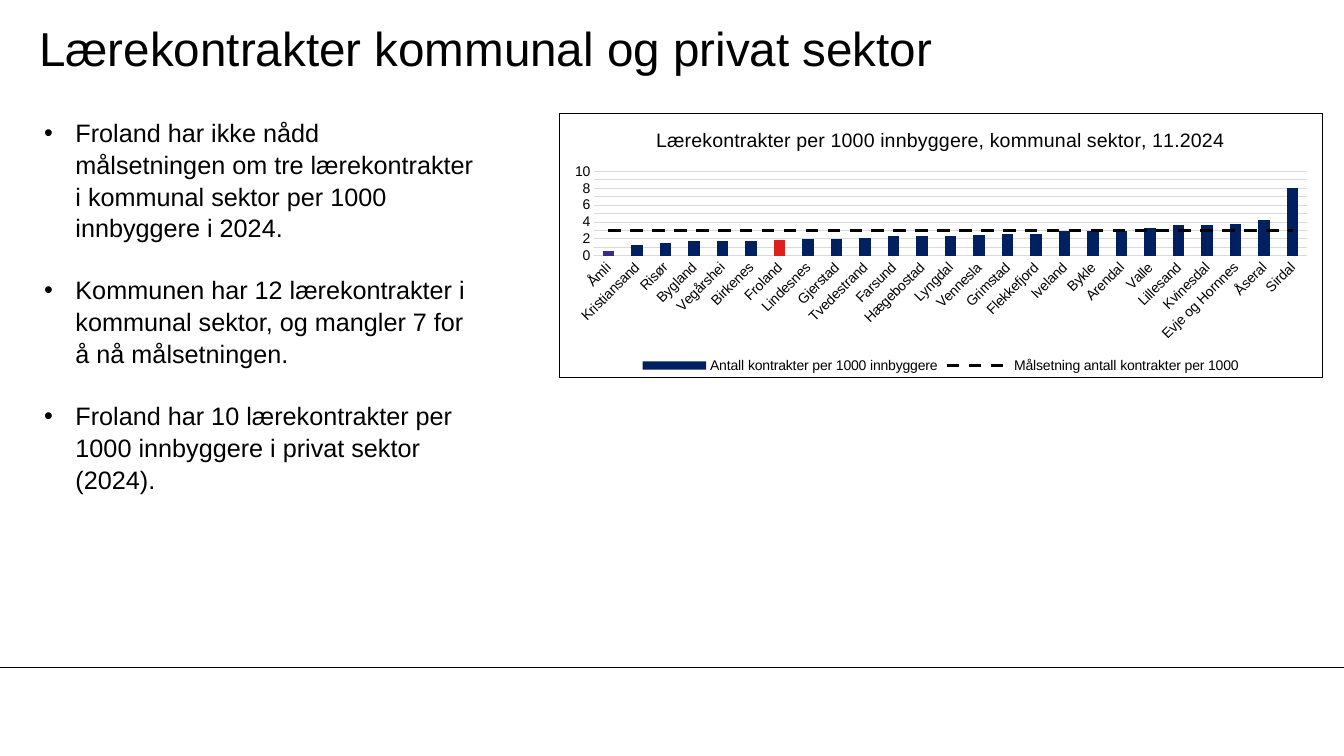
from lxml.etree import SubElement
from pptx import Presentation
from pptx.chart.data import CategoryChartData
from pptx.dml.color import RGBColor
from pptx.enum.chart import (XL_CHART_TYPE as ChartType, XL_LEGEND_POSITION as LegendPosition,
                             XL_MARKER_STYLE as MarkerStyle, XL_TICK_MARK as TickMark)
from pptx.enum.dml import MSO_LINE_DASH_STYLE as Dash
from pptx.enum.shapes import MSO_CONNECTOR as Connector
from pptx.enum.text import MSO_ANCHOR as Anchor
from pptx.oxml import parse_xml
from pptx.oxml.ns import nsdecls, qn
from pptx.util import Inches, Pt

COLORS = {"text": "000000", "bar": "002060", "lowest": "352D86", "froland": "DF1F1D",
          "grid": "D9D9D9", "background": "FFFFFF"}
FONT = "Arial"
TITLE = "Lærekontrakter kommunal og privat sektor"
BULLETS = [
    "Froland har ikke nådd målsetningen om tre lærekontrakter i kommunal sektor per 1000 innbyggere i 2024.",
    "Kommunen har 12 lærekontrakter i kommunal sektor, og mangler 7 for å nå målsetningen.",
    "Froland har 10 lærekontrakter per 1000 innbyggere i privat sektor (2024).",
]
CHART_TITLE = "Lærekontrakter per 1000 innbyggere, kommunal sektor, 11.2024"
TARGET = 3
CONTRACTS = {
    "Åmli": 0.6, "Kristiansand": 1.3, "Risør": 1.5, "Bygland": 1.8, "Vegårshei": 1.8,
    "Birkenes": 1.8, "Froland": 1.9, "Lindesnes": 2, "Gjerstad": 2, "Tvedestrand": 2.1,
    "Farsund": 2.3, "Hægebostad": 2.3, "Lyngdal": 2.3, "Vennesla": 2.5, "Grimstad": 2.6,
    "Flekkefjord": 2.6, "Iveland": 2.9, "Bykle": 3, "Arendal": 3, "Valle": 3.3,
    "Lillesand": 3.6, "Kvinesdal": 3.7, "Evje og Hornnes": 3.8, "Åseral": 4.3, "Sirdal": 8,
}
HIGHLIGHTS = {"Åmli": "lowest", "Froland": "froland"}


def rgb(name):
    return RGBColor.from_string(COLORS[name])


def style_font(font, size):
    font.name = FONT
    font.size = Pt(size)
    font.bold = False
    font.color.rgb = rgb("text")


def style_line(line, color, width=0.75):
    line.color.rgb = rgb(color)
    line.width = Pt(width)


def add_rule(slide, top, width):
    rule = slide.shapes.add_connector(Connector.STRAIGHT, 0, top, width, top)
    style_line(rule.line, "text")
    SubElement(rule._element.spPr, qn("a:effectLst"))


def add_title(slide):
    frame = slide.shapes.add_textbox(Inches(0.39), Inches(0.1), Inches(11.1), Inches(0.75)).text_frame
    frame.word_wrap = True
    frame.vertical_anchor = Anchor.MIDDLE
    frame.margin_left = frame.margin_right = frame.margin_top = frame.margin_bottom = 0
    run = frame.paragraphs[0].add_run()
    run.text = TITLE
    style_font(run.font, 34)


def add_bullets(slide):
    frame = slide.shapes.add_textbox(Inches(0.34), Inches(1.1), Inches(4.48), Inches(4.04)).text_frame
    frame.word_wrap = True
    for index, text in enumerate(BULLETS):
        paragraph = frame.add_paragraph() if index else frame.paragraphs[0]
        paragraph.line_spacing = 1.05
        if index:
            paragraph.space_before = Pt(21.7)
        properties = paragraph._p.get_or_add_pPr()
        properties.set("marL", str(Inches(0.31)))
        properties.set("indent", str(-Inches(0.31)))
        SubElement(properties, qn("a:buFont"), typeface=FONT)
        SubElement(properties, qn("a:buChar"), char="•")
        run = paragraph.add_run()
        run.text = text
        style_font(run.font, 18)


def move_target_to_line(chart):
    """Turn the second bar series into a dashed line on the same axes."""
    bars = chart._chartSpace.find(f".//{qn('c:barChart')}")
    line_chart = parse_xml(f'<c:lineChart {nsdecls("c")}><c:grouping val="standard"/>'
                           '<c:varyColors val="0"/></c:lineChart>')
    target = bars.findall(qn("c:ser"))[1]
    for inversion in target.findall(qn("c:invertIfNegative")):
        target.remove(inversion)
    line_chart.append(target)
    SubElement(line_chart, qn("c:marker"), val="1")
    for axis in bars.findall(qn("c:axId")):
        SubElement(line_chart, qn("c:axId"), val=axis.get("val"))
    bars.addnext(line_chart)
    series = chart.plots[1].series[0]
    series.smooth = False
    series.marker.style = MarkerStyle.NONE
    style_line(series.format.line, "text", 2.25)
    series.format.line.dash_style = Dash.DASH


def frame_chart(chart):
    """Give the chart area its border and fix the plot position."""
    chart_element = chart._chartSpace.find(qn("c:chart"))
    chart_element.addnext(parse_xml(
        f'<c:spPr {nsdecls("c", "a")}><a:solidFill><a:srgbClr val="{COLORS["background"]}"/></a:solidFill>'
        f'<a:ln w="{Pt(0.75)}"><a:solidFill><a:srgbClr val="{COLORS["text"]}"/></a:solidFill></a:ln></c:spPr>'))
    plot_area = chart_element.find(qn("c:plotArea"))
    for old_layout in plot_area.findall(qn("c:layout")):
        plot_area.remove(old_layout)
    layout = parse_xml(f'<c:layout {nsdecls("c")}><c:manualLayout/></c:layout>')
    settings = {"layoutTarget": "inner", "xMode": "edge", "yMode": "edge",
                "x": "0.046", "y": "0.22", "w": "0.934", "h": "0.32"}
    for tag, value in settings.items():
        SubElement(layout[0], qn(f"c:{tag}"), val=value)
    plot_area.insert(0, layout)


def style_axes(chart):
    for axis in (chart.category_axis, chart.value_axis):
        axis.major_tick_mark = axis.minor_tick_mark = TickMark.NONE
        style_font(axis.tick_labels.font, 10)
    style_line(chart.category_axis.format.line, "grid")
    values = chart.value_axis
    values.minimum_scale, values.maximum_scale, values.major_unit = 0, 10, 1
    values.tick_labels.number_format = "0"
    values.tick_labels.number_format_is_linked = False
    values.format.line.fill.background()
    style_line(values.major_gridlines.format.line, "grid")


def add_contract_chart(slide):
    data = CategoryChartData()
    data.categories = list(CONTRACTS)
    data.add_series("Antall kontrakter per 1000 innbyggere", list(CONTRACTS.values()))
    data.add_series("Målsetning antall kontrakter per 1000", [TARGET] * len(CONTRACTS))
    chart = slide.shapes.add_chart(ChartType.COLUMN_CLUSTERED, Inches(5.54), Inches(1.12),
                                   Inches(7.58), Inches(2.63), data).chart
    style_font(chart.font, 10)
    run = chart.chart_title.text_frame.paragraphs[0].add_run()
    run.text = CHART_TITLE
    style_font(run.font, 14)
    chart.chart_title.include_in_layout = False
    chart.has_legend = True
    chart.legend.position = LegendPosition.BOTTOM
    chart.legend.include_in_layout = False
    style_font(chart.legend.font, 10)
    style_axes(chart)
    plot = chart.plots[0]
    plot.gap_width = 150
    plot.vary_by_categories = False
    bars = plot.series[0]
    bars.format.fill.solid()
    bars.format.fill.fore_color.rgb = rgb("bar")
    for index, place in enumerate(CONTRACTS):
        if place in HIGHLIGHTS:
            fill = bars.points[index].format.fill
            fill.solid()
            fill.fore_color.rgb = rgb(HIGHLIGHTS[place])
    move_target_to_line(chart)
    frame_chart(chart)


def main():
    presentation = Presentation()
    presentation.slide_width = Inches(13.33)
    presentation.slide_height = Inches(7.5)
    slide = presentation.slides.add_slide(presentation.slide_layouts[6])
    add_rule(slide, Inches(6.62), presentation.slide_width)
    add_title(slide)
    add_bullets(slide)
    add_contract_chart(slide)
    presentation.save("out.pptx")


if __name__ == "__main__":
    main()
